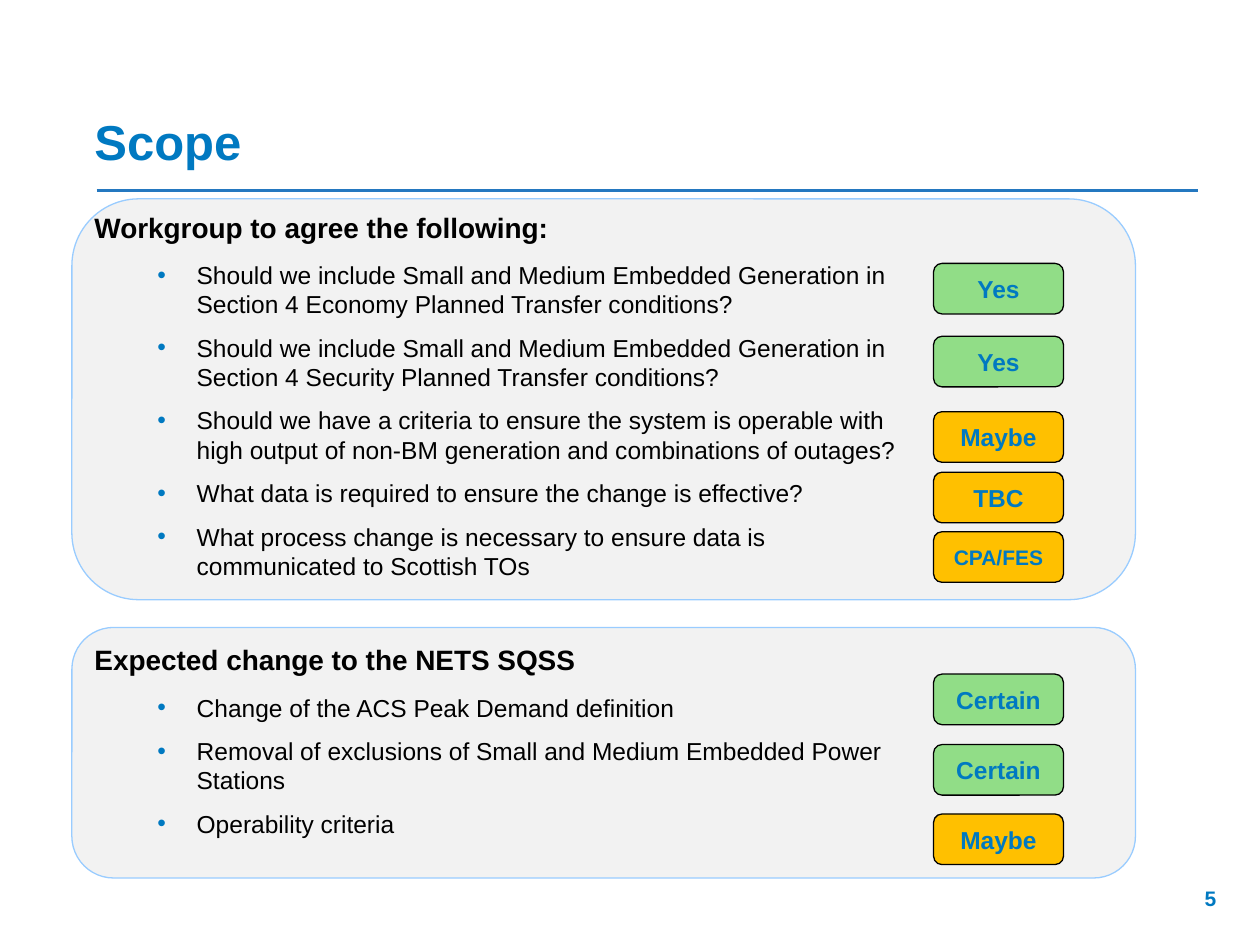
from lxml.etree import SubElement
from pptx import Presentation
from pptx.dml.color import RGBColor
from pptx.enum.shapes import MSO_CONNECTOR, MSO_SHAPE
from pptx.enum.text import MSO_ANCHOR, MSO_AUTO_SIZE, PP_ALIGN
from pptx.oxml.ns import qn
from pptx.util import Cm, Pt

COLORS = {
    "brand": "0079C1", "rule": "2478C0", "text": "000000", "panel": "F2F2F2",
    "panel_line": "99CCFF", "green": "91DD87", "amber": "FFC000",
}
SECTIONS = [
    {
        "box": (1.45, 4.01, 21.44, 8.08),
        "heading": "Workgroup to agree the following:",
        "bullets": [
            "Should we include Small and Medium Embedded Generation in Section 4 Economy Planned Transfer conditions?",
            "Should we include Small and Medium Embedded Generation in Section 4 Security Planned Transfer conditions?",
            "Should we have a criteria to ensure the system is operable with high output of non-BM generation and combinations of outages?",
            "What data is required to ensure the change is effective?",
            "What process change is necessary to ensure data is communicated to Scottish TOs",
        ],
        "answers": [
            ("Yes", "green", 1.3, 14), ("Yes", "green", 2.77, 14),
            ("Maybe", "amber", 4.29, 14), ("TBC", "amber", 5.51, 14),
            ("CPA/FES", "amber", 6.71, 12),
        ],
    },
    {
        "box": (1.45, 12.65, 21.44, 5.05),
        "heading": "Expected change to the NETS SQSS",
        "bullets": [
            "Change of the ACS Peak Demand definition",
            "Removal of exclusions of Small and Medium Embedded Power Stations",
            "Operability criteria",
        ],
        "answers": [
            ("Certain", "green", 0.94, 14), ("Certain", "green", 2.36, 14),
            ("Maybe", "amber", 3.76, 14),
        ],
    },
]


def rgb(name):
    """Return the named palette colour."""
    return RGBColor.from_string(COLORS[name])


def place(sp, x, y, w, h):
    """Move and size a shape in centimetres."""
    sp.left, sp.top, sp.width, sp.height = Cm(x), Cm(y), Cm(w), Cm(h)


def write(p, text, size=14, color="brand", bold=True, align=PP_ALIGN.LEFT, before=0, after=0):
    """Write one formatted run into a paragraph."""
    p.alignment = align
    p.space_before, p.space_after = Pt(before), Pt(after)
    r = p.add_run()
    r.text = text
    r.font.name, r.font.size, r.font.bold = "Arial", Pt(size), bold
    r.font.color.rgb = rgb(color)


def set_frame(tf, anchor):
    """Give a text frame wrapping, a fixed size and an anchor."""
    tf.word_wrap = True
    tf.auto_size = MSO_AUTO_SIZE.NONE
    tf.vertical_anchor = anchor


def set_bullet(p, char=None, indent=0, hang=0):
    """Set the bullet and indents of a paragraph, or remove them."""
    pPr = p._p.get_or_add_pPr()
    pPr.set("marL", str(Cm(indent)))
    pPr.set("indent", str(-Cm(hang)))
    if char is None:
        SubElement(pPr, qn("a:buNone"))
        return
    clr = SubElement(pPr, qn("a:buClr"))
    SubElement(clr, qn("a:srgbClr"), val=COLORS["brand"])
    SubElement(pPr, qn("a:buFont"), typeface="Arial")
    SubElement(pPr, qn("a:buChar"), char=char)


def add_box(s, x, y, w, h, fill, line):
    """Add a rounded box with a thin outline."""
    sp = s.shapes.add_shape(MSO_SHAPE.ROUNDED_RECTANGLE, Cm(x), Cm(y), Cm(w), Cm(h))
    sp.shadow.inherit = False
    sp.fill.solid()
    sp.fill.fore_color.rgb = rgb(fill)
    sp.line.color.rgb = rgb(line)
    sp.line.width = Pt(0.75)
    return sp


def add_header(s, x, y, w, h):
    """Fill the title and draw the rule below it."""
    place(s.shapes.title, x, y, w, h)
    tf = s.shapes.title.text_frame
    set_frame(tf, MSO_ANCHOR.BOTTOM)
    write(tf.paragraphs[0], "Scope", size=28)
    rule_y = Cm(y + h + 0.28)
    rule = s.shapes.add_connector(
        MSO_CONNECTOR.STRAIGHT, Cm(x + 0.3), rule_y, Cm(x + w + 0.02), rule_y)
    rule.line.color.rgb = rgb("rule")
    rule.line.width = Pt(1.5)
    SubElement(rule._element.spPr, qn("a:effectLst"))


def add_panel(s, x, y, w, h):
    """Add a section background behind the body text."""
    sp = add_box(s, x, y, w, h, "panel", "panel_line")
    s.shapes._spTree.insert(2, sp._element)


def add_answers(s, x, y, answers):
    """Add the answer labels of a section relative to its corner."""
    for text, fill, top, size in answers:
        sp = add_box(s, x + 17.37, y + top, 2.62, 1.02, fill, "text")
        set_frame(sp.text_frame, MSO_ANCHOR.MIDDLE)
        write(sp.text_frame.paragraphs[0], text, size=size, align=PP_ALIGN.CENTER)


def add_body(s, x, y, w, h):
    """Fill the body with the headings and bullets of all sections."""
    body = s.placeholders[1]
    place(body, x, y, w, h)
    tf = body.text_frame
    set_frame(tf, MSO_ANCHOR.TOP)
    for i, section in enumerate(SECTIONS):
        p = tf.add_paragraph() if i else tf.paragraphs[0]
        set_bullet(p)
        write(p, section["heading"], size=16, color="text", before=27.6 if i else 0, after=9.2)
        for text in section["bullets"]:
            p = tf.add_paragraph()
            p.level = 1
            set_bullet(p, "•", 2.06, 0.79)
            write(p, text, color="text", bold=False, after=8)


def add_page_number(s, x, y, w, h):
    """Add the page number at the lower right."""
    tf = s.shapes.add_textbox(Cm(x), Cm(y), Cm(w), Cm(h)).text_frame
    set_frame(tf, MSO_ANCHOR.TOP)
    write(tf.paragraphs[0], "5", size=12, align=PP_ALIGN.RIGHT)


def main():
    """Build and save the slide."""
    prs = Presentation()
    prs.slide_width, prs.slide_height = Cm(25.4), Cm(19.05)
    s = prs.slides.add_slide(prs.slide_layouts[1])
    add_header(s, 1.65, 2.11, 22.48, 1.45)
    add_body(s, 1.65, 4.11, 16.92, 12.9)
    for section in SECTIONS:
        add_panel(s, *section["box"])
        add_answers(s, *section["box"][:2], section["answers"])
    add_page_number(s, 18.85, 17.73, 5.92, 1.02)
    prs.save("out.pptx")


if __name__ == "__main__":
    main()
